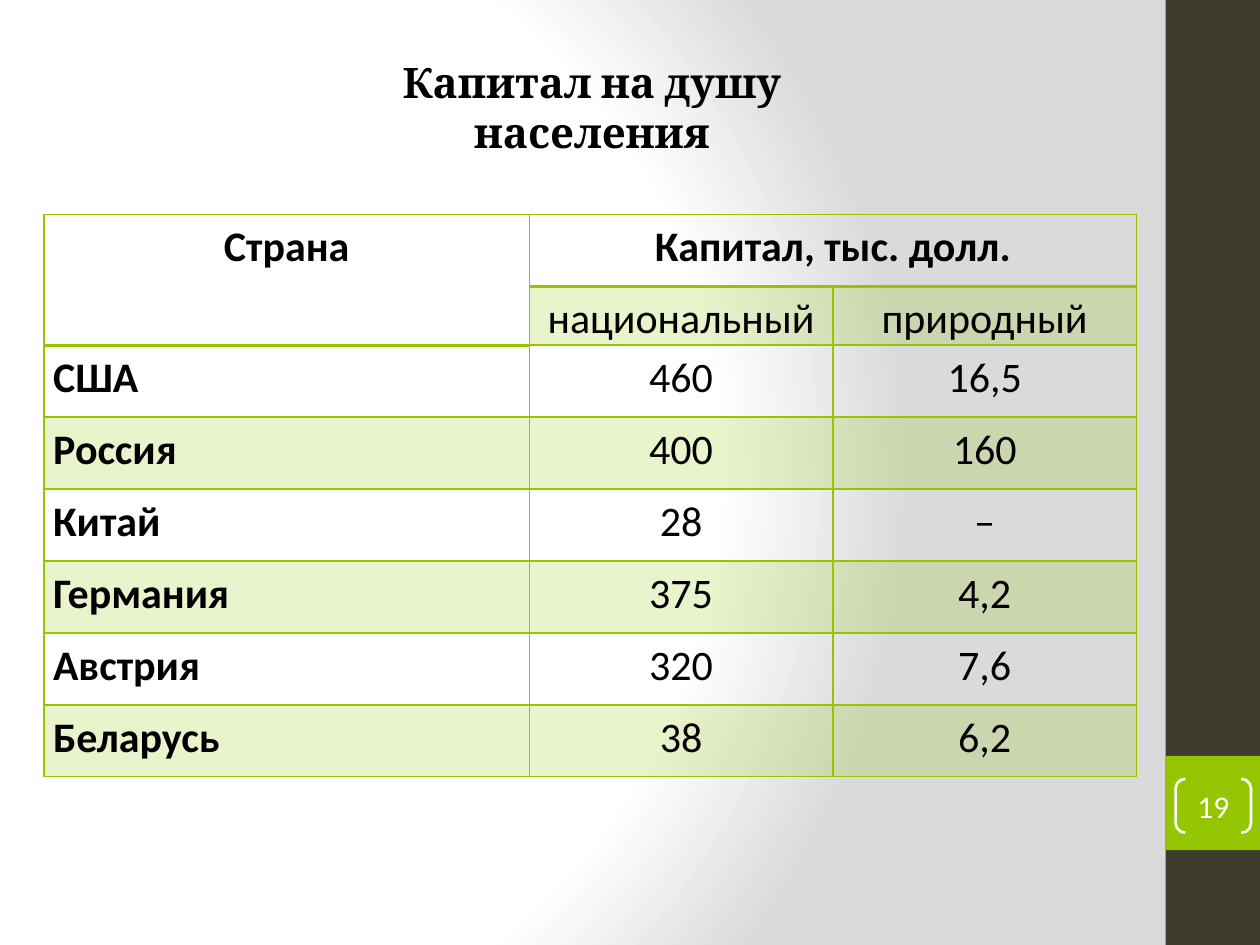
from dataclasses import dataclass

from lxml import etree
from pptx import Presentation
from pptx.dml.color import RGBColor
from pptx.enum.shapes import MSO_SHAPE
from pptx.enum.text import MSO_ANCHOR, MSO_AUTO_SIZE, PP_ALIGN
from pptx.oxml import parse_xml
from pptx.oxml.ns import qn
from pptx.util import Cm, Pt

LEFT, CENTER = PP_ALIGN.LEFT, PP_ALIGN.CENTER
MIDDLE = MSO_ANCHOR.MIDDLE
RECTANGLE, BRACKETS = MSO_SHAPE.RECTANGLE, MSO_SHAPE.DOUBLE_BRACKET
NO_AUTOFIT = MSO_AUTO_SIZE.NONE
GREEN, DARK, BLACK, WHITE = "94C600", "3E3D2D", "000000", "FFFFFF"
DRAWING_NS = "http://schemas.openxmlformats.org/drawingml/2006/main"
TITLE_ONLY = 5
THIN, THICK = 1, 2


@dataclass
class Box:
    left: float
    top: float
    width: float
    height: float

    def lengths(self):
        return Cm(self.left), Cm(self.top), Cm(self.width), Cm(self.height)


@dataclass
class Country:
    name: str
    national: str
    natural: str


COUNTRIES = [
    Country("США", "460", "16,5"),
    Country("Россия", "400", "160"),
    Country("Китай", "28", "–"),
    Country("Германия", "375", "4,2"),
    Country("Австрия", "320", "7,6"),
    Country("Беларусь", "38", "6,2"),
]
COLUMN_WIDTHS = [9.78, 6.12, 6.12]
ROW_HEIGHT, SUBHEADER_HEIGHT = 1.45, 1.17


def rgb(value: str) -> RGBColor:
    return RGBColor.from_string(value)


def write(frame, text: str, size: float, color: str, font="Calibri",
          bold=False, align=CENTER, spacing=None):
    paragraph = frame.paragraphs[0]
    paragraph.alignment = align
    paragraph.line_spacing = spacing
    run = paragraph.add_run()
    run.text = text
    run.font.size = Pt(size)
    run.font.name = font
    run.font.bold = bold
    run.font.color.rgb = rgb(color)


def set_background(slide):
    """Circular gradient, white turning grey towards the right."""
    slide.background.fill.solid()
    solid = slide.element.find(".//" + qn("p:bgPr")).find(qn("a:solidFill"))
    stops = "".join(
        f'<a:gs pos="{pos * 1000}"><a:srgbClr val="{color}"/></a:gs>'
        for pos, color in [(0, WHITE), (75, WHITE), (100, "DADADA")])
    gradient = parse_xml(
        f'<a:gradFill xmlns:a="{DRAWING_NS}" rotWithShape="1">'
        f'<a:gsLst>{stops}</a:gsLst><a:path path="circle">'
        '<a:fillToRect l="20000" t="50000" r="100000" b="50000"/>'
        '</a:path></a:gradFill>')
    solid.getparent().replace(solid, gradient)


def add_block(slide, box: Box, color: str):
    block = slide.shapes.add_shape(RECTANGLE, *box.lengths())
    block.shadow.inherit = False
    block.fill.solid()
    block.fill.fore_color.rgb = rgb(color)
    block.line.fill.background()


def add_page_number(slide, box: Box, number: str):
    brackets = slide.shapes.add_shape(BRACKETS, *box.lengths())
    brackets.shadow.inherit = False
    brackets.adjustments[0] = 0.18
    brackets.fill.background()
    brackets.line.color.rgb = rgb(WHITE)
    brackets.line.width = Pt(1.5)
    frame = brackets.text_frame
    frame.margin_left = frame.margin_right = 0
    frame.margin_top = frame.margin_bottom = 0
    frame.vertical_anchor = MIDDLE
    write(frame, number, 18, WHITE)


def set_title(slide, box: Box, text: str):
    title = slide.shapes.title
    title.left, title.top, title.width, title.height = box.lengths()
    frame = title.text_frame
    frame.word_wrap = True
    frame.auto_size = NO_AUTOFIT
    frame.vertical_anchor = MIDDLE
    write(frame, text, 24, BLACK, font="Cambria", bold=True)


def style_cell(cell, tinted: bool, top: int, bottom: int):
    """Margins, fill and green borders; top and bottom are widths in points."""
    cell.margin_left = cell.margin_right = Cm(0.18)
    cell.margin_top = cell.margin_bottom = 0
    properties = cell._tc.get_or_add_tcPr()
    if tinted:
        cell.fill.solid()
        cell.fill.fore_color.rgb = rgb(GREEN)
        tint = properties.find(qn("a:solidFill")).find(qn("a:srgbClr"))
        etree.SubElement(tint, qn("a:alpha"), val="20000")
    else:
        cell.fill.background()
    borders = [("L", THIN), ("R", THIN), ("T", top), ("B", bottom)]
    for index, (side, width) in enumerate(borders):
        properties.insert(index, parse_xml(
            f'<a:ln{side} xmlns:a="{DRAWING_NS}" w="{Pt(width)}"><a:solidFill>'
            f'<a:srgbClr val="{GREEN}"/></a:solidFill></a:ln{side}>'))


def add_capital_table(slide, left: float, top: float):
    rows = [("Страна", "Капитал, тыс. долл.", ""),
            ("", "национальный", "природный")]
    rows += [(c.name, c.national, c.natural) for c in COUNTRIES]
    heights = [ROW_HEIGHT, SUBHEADER_HEIGHT] + [ROW_HEIGHT] * len(COUNTRIES)
    area = Box(left, top, sum(COLUMN_WIDTHS), sum(heights))
    table = slide.shapes.add_table(
        len(rows), len(COLUMN_WIDTHS), *area.lengths()).table
    table.first_row = table.horz_banding = False
    for column, width in zip(table.columns, COLUMN_WIDTHS):
        column.width = Cm(width)
    for row, height in zip(table.rows, heights):
        row.height = Cm(height)

    for r, texts in enumerate(rows):
        for c, text in enumerate(texts):
            header_end = 1 if c == 0 else 0
            cell = table.cell(r, c)
            style_cell(cell,
                       tinted=r % 2 == 1 and r > header_end,
                       top=THICK if r == header_end + 1 else THIN,
                       bottom=THICK if r <= header_end else THIN)
            if text:
                write(cell.text_frame, text, 24, BLACK,
                      bold=r == 0 or c == 0,
                      align=LEFT if c == 0 and r > 1 else CENTER,
                      spacing=1.15)
    table.cell(0, 0).merge(table.cell(1, 0))
    table.cell(0, 1).merge(table.cell(0, 2))


def main():
    deck = Presentation()
    deck.slide_width, deck.slide_height = Cm(25.4), Cm(19.05)
    slide = deck.slides.add_slide(deck.slide_layouts[TITLE_ONLY])
    set_background(slide)
    add_block(slide, Box(23.5, 0, 1.9, 19.05), DARK)
    add_block(slide, Box(23.5, 15.24, 1.9, 1.9), GREEN)
    add_capital_table(slide, 0.89, 4.32)
    set_title(slide, Box(5.87, 1.52, 12.12, 1.27), "Капитал на душу населения")
    add_page_number(slide, Box(23.7, 15.7, 1.52, 1.09), "19")
    deck.save("out.pptx")


if __name__ == "__main__":
    main()
